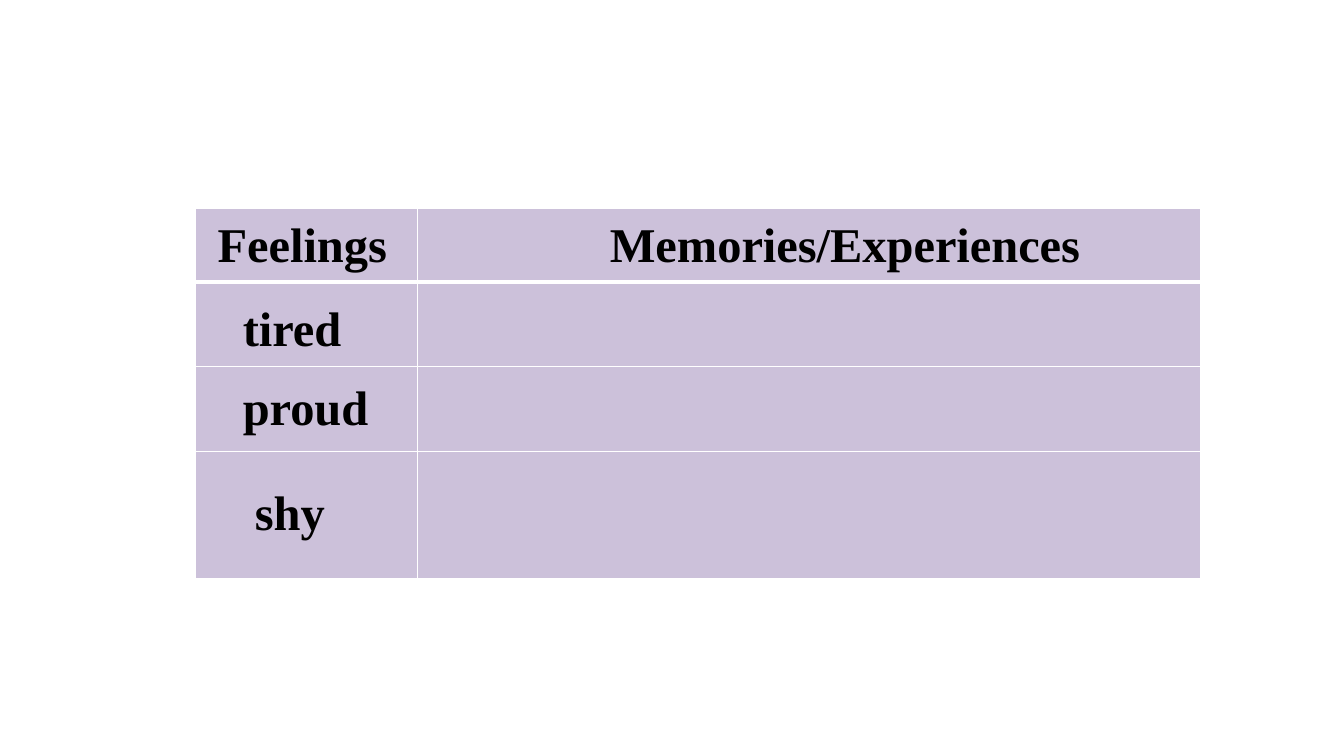
from pptx import Presentation
from pptx.dml.color import RGBColor
from pptx.oxml import parse_xml
from pptx.oxml.ns import nsdecls
from pptx.util import Inches, Pt

# Content: wording, left, top, width
LABELS = [
    ("Feelings", 2.06, 2.07, 2.21),
    ("Memories/Experiences", 5.95, 2.07, 5.75),
    ("tired", 2.31, 2.91, 1.28),
    ("proud", 2.31, 3.69, 1.77),
    ("shy", 2.43, 4.73, 1.03),
]
COLS = [2.2, 7.77]
ROWS = [0.73, 0.84, 0.84, 1.26]
LEFT, TOP = 1.94, 2.07
LILAC, WHITE, BLACK = "CCC1DA", "FFFFFF", "000000"


def color(code):
    return RGBColor.from_string(code)


def border(cell, widths):
    props = cell._tc.get_or_add_tcPr()
    for spot, (side, width) in enumerate(widths.items()):
        props.insert(spot, parse_xml(
            f'<a:ln{side} {nsdecls("a")} w="{Pt(width)}"><a:solidFill>'
            f'<a:srgbClr val="{WHITE}"/></a:solidFill></a:ln{side}>'))


def add_grid(slide):
    grid = slide.shapes.add_table(
        len(ROWS), len(COLS), Inches(LEFT), Inches(TOP),
        Inches(sum(COLS)), Inches(sum(ROWS))).table
    for col, width in zip(grid.columns, COLS):
        col.width = Inches(width)
    for row, height in zip(grid.rows, ROWS):
        row.height = Inches(height)
    # The rule under the header is thicker
    for r in range(len(ROWS)):
        for cell in grid.rows[r].cells:
            cell.fill.solid()
            cell.fill.fore_color.rgb = color(LILAC)
            border(cell, {"L": 1, "R": 1, "T": 3 if r == 1 else 1,
                          "B": 3 if r == 0 else 1})


def add_label(slide, words, left, top, width):
    box = slide.shapes.add_textbox(
        Inches(left), Inches(top), Inches(width), Inches(0.68))
    box.text_frame.word_wrap = True
    run = box.text_frame.paragraphs[0].add_run()
    run.text = words
    font = run.font
    font.name, font.size, font.bold = "Times New Roman", Pt(34.6), True
    font.color.rgb = color(BLACK)


def main():
    deck = Presentation()
    deck.slide_width, deck.slide_height = Inches(13.33), Inches(7.5)
    slide = deck.slides.add_slide(deck.slide_layouts[6])
    slide.background.fill.solid()
    slide.background.fill.fore_color.rgb = color(WHITE)
    # Table below, labels on top
    add_grid(slide)
    for label in LABELS:
        add_label(slide, *label)
    deck.save("out.pptx")


if __name__ == "__main__":
    main()
